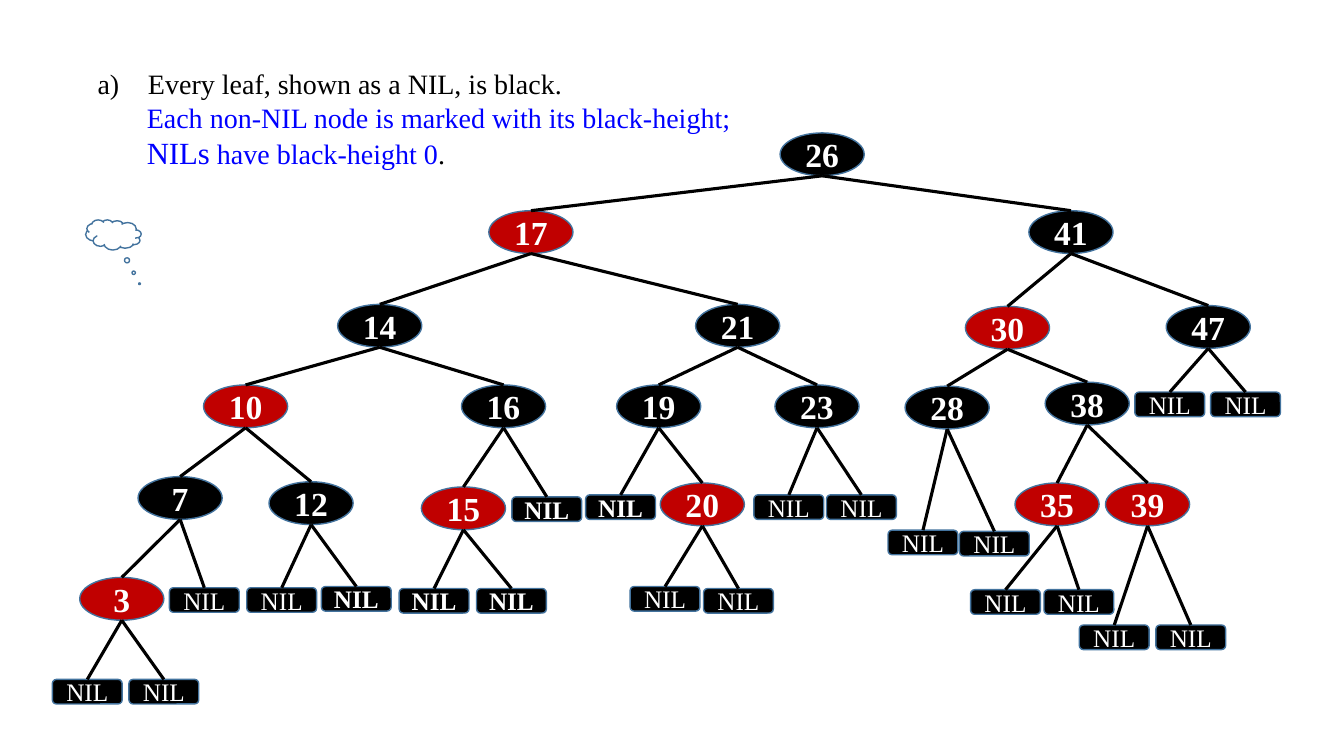
import pptx
import pptx.util
import pptx.oxml.ns
from lxml import etree
from pptx.dml.color import RGBColor
from pptx.enum.shapes import MSO_CONNECTOR, MSO_SHAPE
from pptx.enum.text import MSO_ANCHOR, MSO_AUTO_SIZE, PP_ALIGN

Cm, Pt, qn = pptx.util.Cm, pptx.util.Pt, pptx.oxml.ns.qn

BLACK = RGBColor(0x00, 0x00, 0x00)
RED = RGBColor(0xC0, 0x00, 0x00)
WHITE = RGBColor(0xFF, 0xFF, 0xFF)
BLUE = RGBColor(0x00, 0x00, 0xFF)
OUTLINE = RGBColor(0x43, 0x73, 0x9E)

NODE_SIZE = Cm(2.12), Cm(1.08)
NIL_SIZE = Cm(1.76), Cm(0.62)

# key, parent, left, top, fill
NODES = [
    (26, None, 19.66, 3.35, BLACK),
    (17, 26, 12.32, 5.31, RED),
    (41, 26, 25.93, 5.31, BLACK),
    (14, 17, 8.51, 7.67, BLACK),
    (21, 17, 17.53, 7.67, BLACK),
    (30, 41, 24.33, 7.72, RED),
    (47, 41, 29.39, 7.70, BLACK),
    (10, 14, 5.13, 9.70, RED),
    (16, 14, 11.63, 9.70, BLACK),
    (19, 21, 15.54, 9.70, BLACK),
    (23, 21, 19.53, 9.70, BLACK),
    (28, 30, 22.81, 9.73, BLACK),
    (38, 30, 26.34, 9.63, BLACK),
    (7, 10, 3.48, 12.01, BLACK),
    (12, 10, 6.78, 12.14, BLACK),
    (15, 16, 10.62, 12.27, RED),
    (20, 19, 16.64, 12.17, RED),
    (35, 38, 25.58, 12.17, RED),
    (39, 38, 27.86, 12.17, RED),
    (3, 7, 2.01, 14.55, RED),
]

# parent, left, top, bold
NILS = [
    (3, 1.32, 17.12, False), (3, 3.25, 17.12, False),
    (7, 4.27, 14.81, False),
    (12, 6.22, 14.81, False), (12, 8.10, 14.78, True),
    (15, 10.06, 14.83, True), (15, 12.01, 14.83, True),
    (16, 12.90, 12.52, True),
    (19, 14.76, 12.47, True),
    (20, 15.88, 14.78, False), (20, 17.73, 14.83, False),
    (23, 19.00, 12.47, False), (23, 20.83, 12.47, False),
    (28, 22.38, 13.36, False), (28, 24.18, 13.39, False),
    (35, 24.46, 14.86, False), (35, 26.31, 14.86, False),
    (39, 27.20, 15.75, False), (39, 29.13, 15.75, False),
    (47, 28.60, 9.88, False), (47, 30.51, 9.88, False),
]


def add_outlined(kind, left, top, size, fill):
    s = slide.shapes.add_shape(kind, Cm(left), Cm(top), *size)
    s.shadow.inherit = False
    s.fill.solid()
    s.fill.fore_color.rgb = fill
    s.line.color.rgb = OUTLINE
    s.line.width = Pt(1)
    return s


def add_run(p, text, color, **formats):
    r = p.add_run()
    r.text = text
    r.font.color.rgb = color
    for name, value in {"name": "Times New Roman", **formats}.items():
        setattr(r.font, name, value)


prs = pptx.Presentation()
prs.slide_width, prs.slide_height = Cm(33.87), Cm(19.05)
slide = prs.slides.add_slide(prs.slide_layouts[6])

# Tree nodes and leaves
labels = [
    (MSO_SHAPE.OVAL, NODE_SIZE, str(key), parent, left, top, fill, 24, True)
    for key, parent, left, top, fill in NODES
] + [
    (MSO_SHAPE.ROUNDED_RECTANGLE, NIL_SIZE, "NIL", str(parent), left, top, BLACK, 18, bold)
    for parent, left, top, bold in NILS
]
nodes, edges = {}, []
for kind, size, label, parent, left, top, fill, points, bold in labels:
    s = add_outlined(kind, left, top, size, fill)
    tf = s.text_frame
    tf.vertical_anchor = MSO_ANCHOR.MIDDLE
    p = tf.paragraphs[0]
    p.alignment = PP_ALIGN.CENTER
    add_run(p, label, WHITE, size=Pt(points), bold=bold)
    if label != "NIL":
        nodes[label] = s
    if parent is not None:
        edges.append((str(parent), s))

# Edges from the bottom of each parent to the top of its child
for parent, child in edges:
    s = nodes[parent]
    x, y = s.left + s.width // 2, s.top + s.height
    c = slide.shapes.add_connector(MSO_CONNECTOR.STRAIGHT, x, y, x, y)
    c.end_connect(child, 0)
    c.line.color.rgb = BLACK
    c.line.width = Pt(2.25)
    etree.SubElement(c._element.spPr, qn("a:effectLst"))

# Explanation
tf = slide.shapes.add_textbox(Cm(2.21), Cm(1.55), Cm(18.39), Cm(2.9)).text_frame
tf.word_wrap = True
tf.auto_size = MSO_AUTO_SIZE.SHAPE_TO_FIT_TEXT
paragraphs = [
    (1.27, -1.27, [("Every leaf, shown as a NIL, is black.", BLACK, 20)]),
    (1.24, 0, [("Each non-NIL node is marked with its black-height;", BLUE, 20)]),
    (1.24, 0, [("NILs", BLUE, 22), (" have black-height 0", BLUE, 20), (".", BLACK, 20)]),
]
for i, (margin, indent, runs) in enumerate(paragraphs):
    p = tf.add_paragraph() if i else tf.paragraphs[0]
    pPr = p._p.get_or_add_pPr()
    pPr.set("marL", str(Cm(margin)))
    pPr.set("indent", str(Cm(indent)))
    if indent:
        etree.SubElement(pPr, qn("a:buAutoNum"), type="alphaLcParenR")
    for text, color, points in runs:
        add_run(p, text, color, size=Pt(points))

# Thought cloud
cloud = add_outlined(MSO_SHAPE.CLOUD_CALLOUT, 2.16, 5.54, (Cm(1.4), Cm(0.76)), WHITE)
cloud.adjustments[0], cloud.adjustments[1] = -0.47, 1.62
cloud._element.spPr.xfrm.set("flipH", "1")

prs.save("out.pptx")
